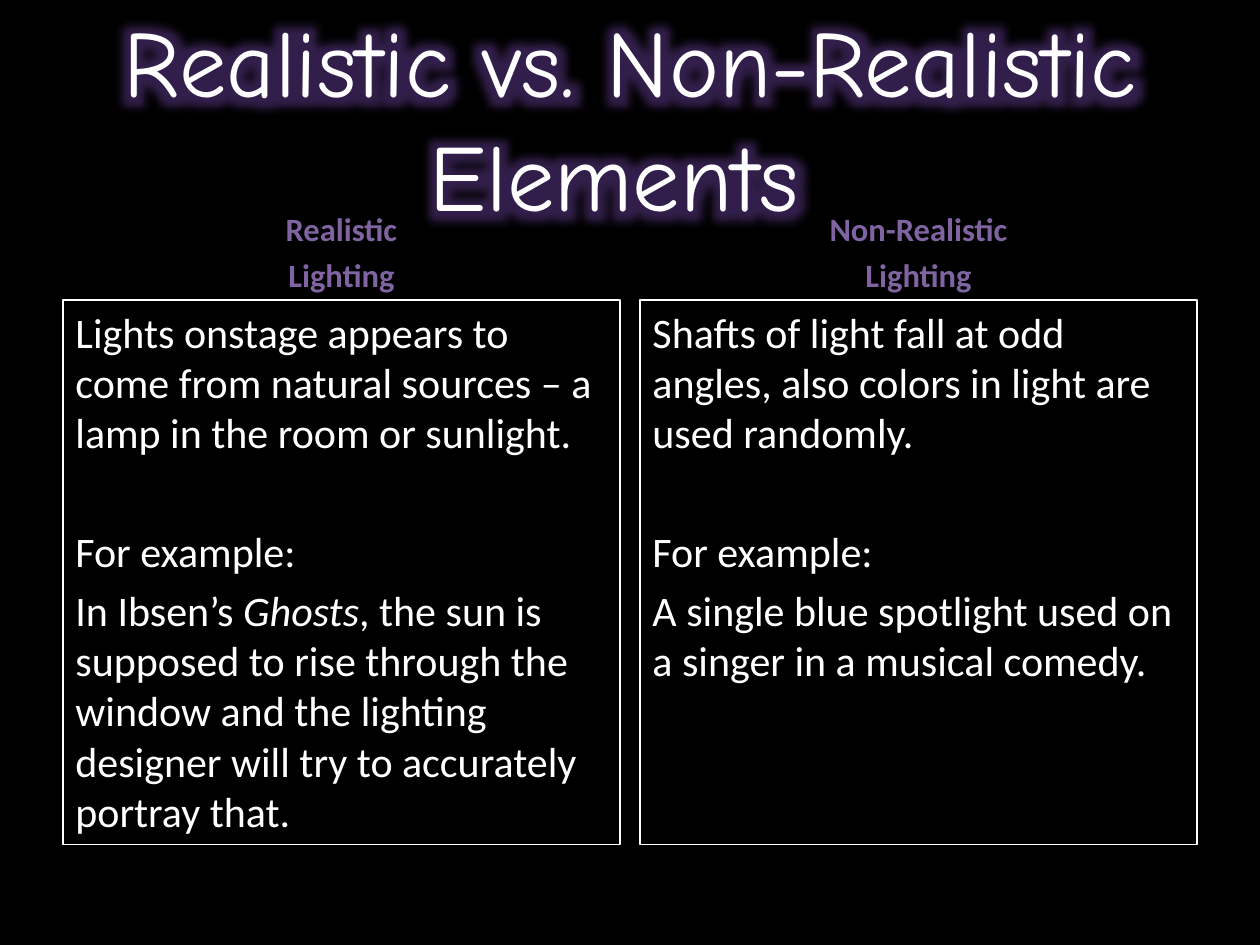
from dataclasses import dataclass

from lxml.etree import SubElement
from pptx import Presentation
from pptx.dml.color import RGBColor
from pptx.enum.shapes import MSO_SHAPE
from pptx.enum.text import MSO_ANCHOR, PP_ALIGN
from pptx.oxml.ns import qn
from pptx.util import Inches, Pt


@dataclass(frozen=True)
class Theme:
    """Colours, fonts and type sizes of the slide."""
    back: str = "000000"
    text: str = "FFFFFF"
    accent: str = "8064A2"
    display: str = "Comic Neue"
    plain: str = "Calibri"
    title: float = 54
    head: float = 18.6
    body: float = 24
    gap: float = 0.2
    line: float = 0.75


class Deck:
    """Holds the theme and the current slide."""

    def __init__(self, theme):
        """Open a black title-only slide."""
        self.theme = theme
        self.file = Presentation()
        self.file.slide_width, self.file.slide_height = Inches(10), Inches(7.5)
        self.slide = self.file.slides.add_slide(self.file.slide_layouts[5])
        fill = self.slide.background.fill
        fill.solid()
        fill.fore_color.rgb = RGBColor.from_string(theme.back)

    def style(self, item, **form):
        """Set each format value on an item."""
        for name, value in form.items():
            setattr(item, name, value)

    def words(self, para, text, color, **form):
        """Add one run of formatted text."""
        run = para.add_run()
        run.text = text
        self.style(run.font, **form)
        run.font.color.rgb = RGBColor.from_string(color)
        return run

    def glow(self, run):
        """Put a soft accent glow behind a run."""
        props = run._r.get_or_add_rPr()
        effect = SubElement(props, qn("a:effectLst"))
        props.find(qn("a:solidFill")).addnext(effect)
        halo = SubElement(effect, qn("a:glow"), rad=str(Pt(18)))
        color = SubElement(halo, qn("a:srgbClr"), val=self.theme.accent)
        SubElement(color, qn("a:satMod"), val="175000")
        SubElement(color, qn("a:alpha"), val="40000")

    def title(self, text, left, top, width, height):
        """Place the glowing title in front."""
        look, shape = self.theme, self.slide.shapes.title
        self.style(shape, left=Inches(left), top=Inches(top),
                   width=Inches(width), height=Inches(height))
        self.style(shape.text_frame, word_wrap=True,
                   vertical_anchor=MSO_ANCHOR.MIDDLE)
        para = shape.text_frame.paragraphs[0]
        para.alignment = PP_ALIGN.CENTER
        self.glow(self.words(para, text, look.text, name=look.display,
                             size=Pt(look.title)))
        shape.element.getparent().append(shape.element)

    def head(self, lines, left, top, width, height):
        """Add a centred column heading."""
        look = self.theme
        frame = self.slide.shapes.add_textbox(
            *map(Inches, (left, top, width, height))).text_frame
        self.style(frame, word_wrap=True, vertical_anchor=MSO_ANCHOR.BOTTOM)
        for i, line in enumerate(lines):
            para = frame.add_paragraph() if i else frame.paragraphs[0]
            self.style(para, alignment=PP_ALIGN.CENTER,
                       space_before=Pt(look.head * look.gap))
            self.words(para, line, look.accent, name=look.plain,
                       size=Pt(look.head), bold=True)

    def panel(self, paras, left, top, width, height):
        """Add an outlined panel; each paragraph is (lead, runs)."""
        look = self.theme
        shape = self.slide.shapes.add_shape(
            MSO_SHAPE.RECTANGLE, *map(Inches, (left, top, width, height)))
        shape.shadow.inherit = False
        shape.fill.background()
        shape.line.color.rgb = RGBColor.from_string(look.text)
        shape.line.width = Pt(look.line)
        frame = shape.text_frame
        self.style(frame, word_wrap=True, vertical_anchor=MSO_ANCHOR.TOP)
        for i, (lead, runs) in enumerate(paras):
            para = frame.add_paragraph() if i else frame.paragraphs[0]
            self.style(para, alignment=PP_ALIGN.LEFT, space_before=Pt(lead))
            for text, slant in runs:
                self.words(para, text, look.text, name=look.plain,
                           size=Pt(look.body), italic=slant)


def main():
    """Build and save the slide."""
    theme = Theme()
    deck = Deck(theme)
    near = theme.body * theme.gap
    far = 2 * near + 1.22 * theme.body
    left, width, step = 0.5, 4.42, 4.58
    cols = [
        ("Realistic",
         "Lights onstage appears to come from natural sources – a lamp in "
         "the room or sunlight.",
         [("In Ibsen’s ", False), ("Ghosts", True),
          (", the sun is supposed to rise through the window and the "
           "lighting designer will try to accurately portray that.", False)]),
        ("Non-Realistic",
         "Shafts of light fall at odd angles, also colors in light are used "
         "randomly.",
         [("A single blue spotlight used on a singer in a musical comedy.",
           False)]),
    ]
    for i, (kind, intro, case) in enumerate(cols):
        x = left + i * step
        deck.head([kind, "Lighting"], x, 1.68, width, 0.7)
        deck.panel([(near, [(intro, False)]),
                    (far, [("For example:", False)]),
                    (near, case)], x, 2.38, width, 4.32)
    deck.title("Realistic vs. Non-Realistic Elements ", left, 0.3, 9, 1.25)
    deck.file.save("out.pptx")


if __name__ == "__main__":
    main()
